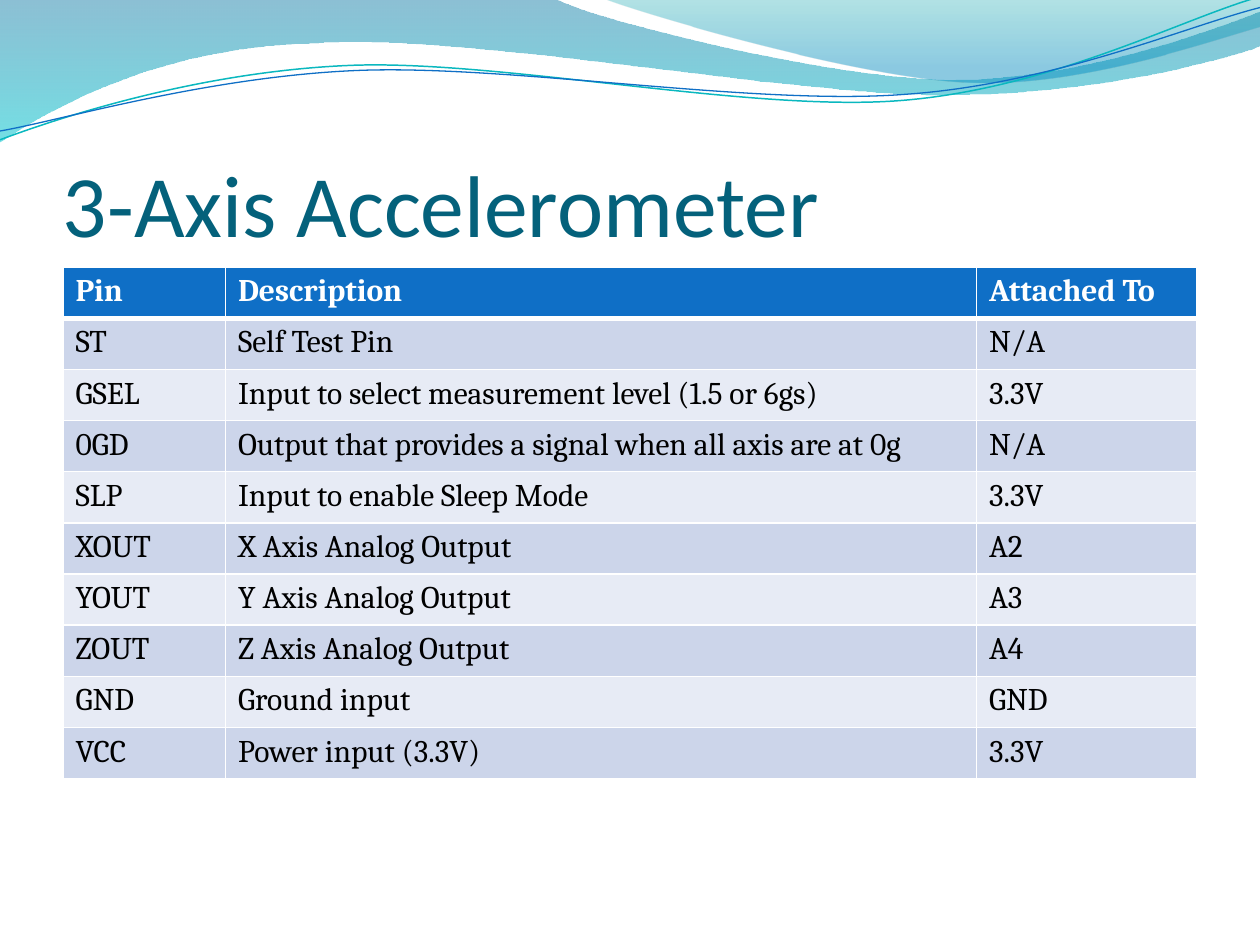
"""Build the 3-axis accelerometer pin table slide."""
from dataclasses import dataclass

from lxml import etree
from pptx import Presentation
from pptx import util as u
from pptx.dml.color import RGBColor
from pptx.enum import text
from pptx.oxml.ns import qn


@dataclass(frozen=True)
class Theme:
    title_font: str = "Calibri"
    body_font: str = "Cambria"
    title_size: int = 50
    body_size: int = 18
    title: str = "04617B"
    header: str = "0F6FC6"
    bands: tuple = ("CCD5EA", "E7EBF5")
    white: str = "FFFFFF"
    black: str = "000000"


THEME = Theme()
TITLE = "3-Axis Accelerometer"
TABLE_BOX = (0.5, 2.12, 9, 4.06)
COLUMN_WIDTHS = (1.29, 5.96, 1.75)
ROWS = [
    ("Pin", "Description", "Attached To"),
    ("ST", "Self Test Pin", "N/A"),
    ("GSEL", "Input to select measurement level (1.5 or 6gs)", "3.3V"),
    ("0GD", "Output that provides a signal when all axis are at 0g", "N/A"),
    ("SLP", "Input to enable Sleep Mode", "3.3V"),
    ("XOUT", "X Axis Analog Output", "A2"),
    ("YOUT", "Y Axis Analog Output", "A3"),
    ("ZOUT", "Z Axis Analog Output", "A4"),
    ("GND", "Ground input", "GND"),
    ("VCC", "Power input (3.3V)", "3.3V"),
]
WAVES = [
    {
        "start": (0, 0),
        "segments": [
            [(4.4, -0.01)],
            [(4.76, 0.17), (6.64, 0.63), (7.58, 0.63)],
            [(8.53, 0.63), (9.58, 0.26), (10, 0.09)],
            [(10.01, 0.36)],
            [(9.83, 0.44), (8.7, 0.76), (7.46, 0.75)],
            [(6.22, 0.75), (3.82, 0.28), (2.57, 0.34)],
            [(1.29, 0.36), (0.46, 0.83), (-0.01, 1.13)],
            [(0, 0)],
        ],
        "gradient": [(0, "0074A1", 45), (1, "00C6CF", 55)],
    },
    {
        "start": (4.79, -0.01),
        "segments": [
            [(5.09, 0.11), (6.82, 0.62), (7.69, 0.65)],
            [(8.56, 0.69), (9.61, 0.32), (10, 0.21)],
            [(10, 0)],
            [(4.79, -0.01)],
        ],
        "gradient": [(0, "00A1A9", 30), (0.8, "008BBF", 45)],
    },
    {
        "start": (0, 1.11),
        "segments": [
            [(0.48, 0.93), (1.58, 0.57), (2.77, 0.52)],
            [(3.95, 0.47), (5.93, 0.89), (7.13, 0.8)],
            [(8.33, 0.71), (9.38, 0.15), (9.98, -0.02)],
        ],
        "line": ("0AB8BF", 0.85),
    },
    {
        "start": (0, 1.04),
        "segments": [
            [(0.47, 0.96), (1.64, 0.61), (2.83, 0.56)],
            [(4.03, 0.51), (5.97, 0.84), (7.17, 0.75)],
            [(8.36, 0.67), (9.41, 0.21), (10, 0.06)],
        ],
        "line": ("0F6FC6", 0.75),
    },
]


def rgb(value):
    return RGBColor.from_string(value)


def write(frame, content, *, font, size, color, bold=False):
    paragraph = frame.paragraphs[0]
    run = paragraph.add_run()
    run.text = content
    run.font.name = font
    run.font.size = u.Pt(size)
    run.font.bold = bold
    run.font.color.rgb = rgb(color)


def curve_segments(shape, segments):
    edges = list(shape._element.spPr.iter(qn("a:lnTo")))
    for edge, points in zip(edges, segments):
        if len(points) == 1:
            continue
        curve = etree.Element(qn("a:cubicBezTo"))
        for x, y in points:
            etree.SubElement(curve, qn("a:pt"), x=str(u.Inches(x) - shape.left),
                             y=str(u.Inches(y) - shape.top))
        edge.getparent().replace(edge, curve)


def add_wave(slide, start, segments, gradient=None, line=None):
    builder = slide.shapes.build_freeform(*map(u.Inches, start))
    ends = [tuple(map(u.Inches, points[-1])) for points in segments]
    builder.add_line_segments(ends, close=gradient is not None)
    shape = builder.convert_to_shape()
    curve_segments(shape, segments)
    shape.shadow.inherit = False
    if line:
        color, width = line
        shape.fill.background()
        shape.line.color.rgb = rgb(color)
        shape.line.width = u.Pt(width)
        return
    shape.line.fill.background()
    shape.fill.gradient()
    shape.fill.gradient_angle = 270
    for stop, (position, color, _) in zip(shape.fill.gradient_stops, gradient):
        stop.position = position
        stop.color.rgb = rgb(color)
    colors = shape._element.spPr.iter(qn("a:srgbClr"))
    for element, (_, _, opacity) in zip(colors, gradient):
        etree.SubElement(element, qn("a:alpha"), val=str(opacity * 1000))


def add_borders(cell, widths):
    properties = cell._tc.get_or_add_tcPr()
    for side, width in widths.items():
        border = etree.SubElement(properties, qn(f"a:ln{side}"), w=str(u.Pt(width)))
        fill = etree.SubElement(border, qn("a:solidFill"))
        etree.SubElement(fill, qn("a:srgbClr"), val=THEME.white)


def add_title(slide):
    box = slide.shapes.add_textbox(*map(u.Inches, (0.5, 0.77, 9, 1.25)))
    frame = box.text_frame
    frame.word_wrap = True
    frame.vertical_anchor = text.MSO_ANCHOR.BOTTOM
    frame.margin_left = frame.margin_right = frame.margin_bottom = 0
    write(frame, TITLE, font=THEME.title_font, size=THEME.title_size, color=THEME.title)


def add_pin_table(slide):
    table = slide.shapes.add_table(
        len(ROWS), len(COLUMN_WIDTHS), *map(u.Inches, TABLE_BOX)
    ).table
    for column, width in zip(table.columns, COLUMN_WIDTHS):
        column.width = u.Inches(width)
    for row, values in enumerate(ROWS):
        header = row == 0
        for column, value in enumerate(values):
            cell = table.cell(row, column)
            add_borders(cell, {"L": 1, "R": 1, "T": 3 if row == 1 else 1, "B": 3 if header else 1})
            cell.fill.solid()
            cell.fill.fore_color.rgb = rgb(THEME.header if header else THEME.bands[(row - 1) % 2])
            write(cell.text_frame, value, font=THEME.body_font, size=THEME.body_size,
                  color=THEME.white if header else THEME.black, bold=header)


def main():
    presentation = Presentation()
    presentation.slide_width = u.Inches(10)
    presentation.slide_height = u.Inches(7.5)
    slide = presentation.slides.add_slide(presentation.slide_layouts[6])
    for wave in WAVES:
        add_wave(slide, **wave)
    add_title(slide)
    add_pin_table(slide)
    presentation.save("out.pptx")


if __name__ == "__main__":
    main()
